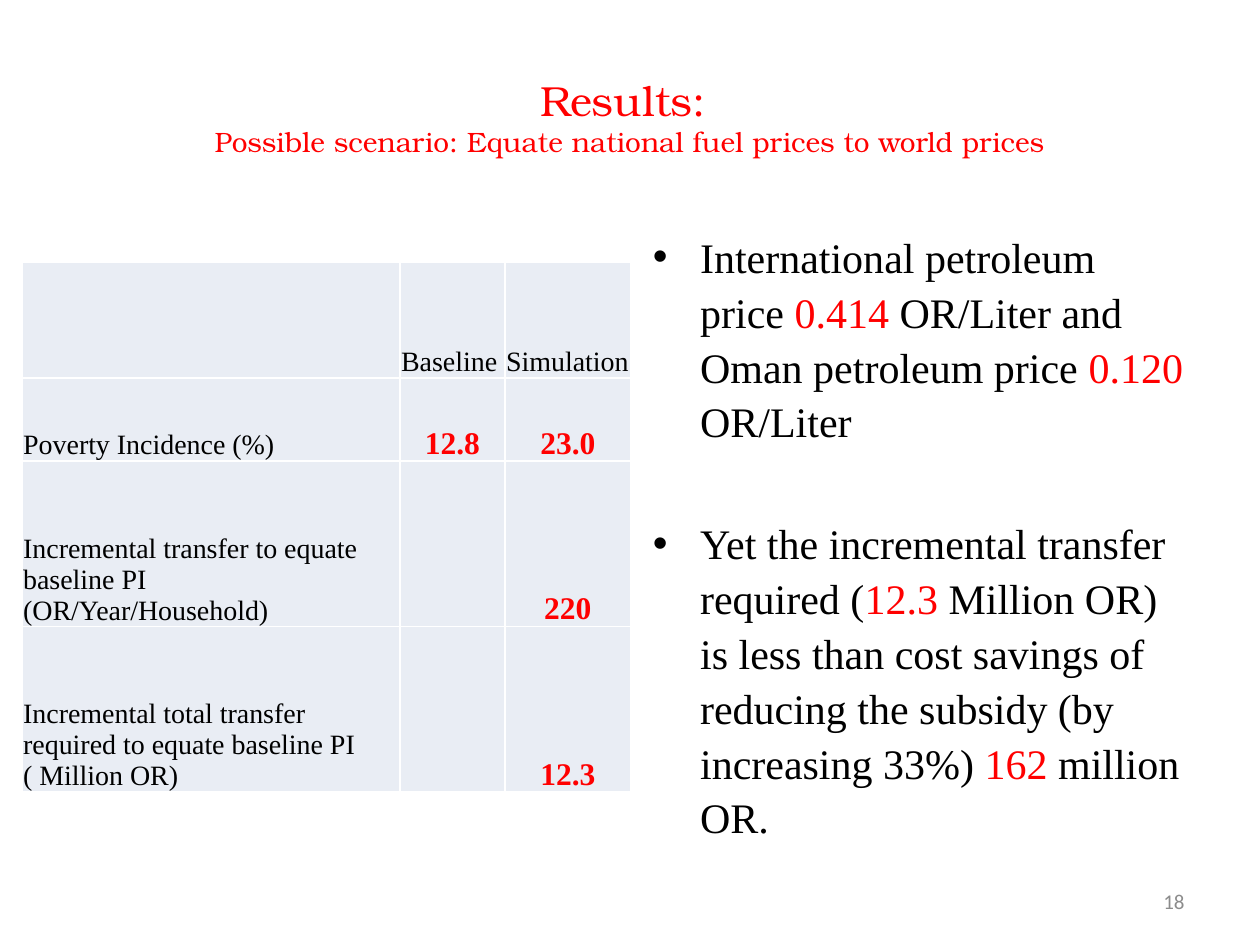
import pptx
import pptx.util
import pptx.dml.color
import pptx.enum.text
from lxml import etree

Pt = pptx.util.Pt
RGB = pptx.dml.color.RGBColor
ALIGN = pptx.enum.text.PP_ALIGN
ANCHOR = pptx.enum.text.MSO_ANCHOR
NS = "http://schemas.openxmlformats.org/drawingml/2006/main"

RED = RGB(0xFF, 0, 0)
BLACK = RGB(0, 0, 0)
GREY = RGB(0x8C, 0x8C, 0x8C)
CELL = RGB(0xE9, 0xED, 0xF4)

# Content
TITLE = [("Results: ", 24),
         ("Possible scenario: Equate national fuel prices to world prices", 16)]
ROWS = [
    ["", "Baseline", "Simulation"],
    ["Poverty Incidence (%)", "12.8", "23.0"],
    ["Incremental transfer to equate baseline PI (OR/Year/Household)", "", "220"],
    ["Incremental total transfer required to equate baseline PI ( Million OR)", "", "12.3"],
]
COL_WIDTHS = [216, 60, 72]
ROW_HEIGHTS = [66, 47.5, 94.5, 94.5]
# Within a bullet, every second piece is a highlighted figure
BULLETS = [
    ["International petroleum price ", "0.414",
     " OR/Liter and Oman petroleum price ", "0.120", " OR/Liter"],
    ["Yet the incremental transfer required (", "12.3",
     " Million OR) is less than cost savings of reducing the subsidy (by increasing 33%) ",
     "162", " million OR."],
]
PAGE = "18"

# Formats
LABEL = {"name": "Times New Roman", "size": Pt(16), "bold": False}
FIGURE = {"name": "Times New Roman", "size": Pt(18), "bold": True}
BODY = {"name": "Times New Roman", "size": Pt(24)}


def add_run(p, text, color, fmt):
    r = p.add_run()
    r.text = text
    for key, value in fmt.items():
        setattr(r.font, key, value)
    r.font.color.rgb = color


def add_borders(cell):
    tcPr = cell._tc.get_or_add_tcPr()
    for side in ("lnL", "lnR", "lnT", "lnB"):
        ln = etree.SubElement(tcPr, f"{{{NS}}}{side}", w=str(Pt(1)))
        fill = etree.SubElement(ln, f"{{{NS}}}solidFill")
        etree.SubElement(fill, f"{{{NS}}}srgbClr", val="FFFFFF")


def add_bullet(p, indent):
    pPr = p._p.get_or_add_pPr()
    pPr.set("marL", str(Pt(indent)))
    pPr.set("indent", str(-Pt(indent)))
    etree.SubElement(pPr, f"{{{NS}}}buFont", typeface="Arial")
    etree.SubElement(pPr, f"{{{NS}}}buChar", char="•")


prs = pptx.Presentation()
prs.slide_width, prs.slide_height = Pt(720), Pt(540)
s = prs.slides.add_slide(prs.slide_layouts[5])

# Title
title = s.shapes.title
title.left, title.top, title.width, title.height = Pt(36), Pt(21.6), Pt(648), Pt(90)
tf = title.text_frame
tf.auto_size = pptx.enum.text.MSO_AUTO_SIZE.NONE
tf.vertical_anchor = ANCHOR.MIDDLE
for i, (text, size) in enumerate(TITLE):
    p = tf.add_paragraph() if i else tf.paragraphs[0]
    p.alignment = ALIGN.CENTER
    add_run(p, text, RED, {"name": "TeX Gyre Bonum", "size": Pt(size)})

# Results table
table = s.shapes.add_table(len(ROWS), len(COL_WIDTHS), Pt(12.5), Pt(150),
                           Pt(sum(COL_WIDTHS)), Pt(sum(ROW_HEIGHTS))).table
table.first_row = table.horz_banding = False
for col, width in zip(table.columns, COL_WIDTHS):
    col.width = Pt(width)
for i, (values, height) in enumerate(zip(ROWS, ROW_HEIGHTS)):
    table.rows[i].height = Pt(height)
    for j, text in enumerate(values):
        cell = table.cell(i, j)
        add_borders(cell)
        cell.fill.solid()
        cell.fill.fore_color.rgb = CELL
        cell.vertical_anchor = ANCHOR.BOTTOM
        cell.margin_left = cell.margin_right = cell.margin_top = Pt(0.75)
        cell.margin_bottom = 0
        if text:
            p = cell.text_frame.paragraphs[0]
            is_figure = i > 0 and j > 0
            p.alignment = ALIGN.CENTER if is_figure else ALIGN.LEFT
            add_run(p, text, RED if is_figure else BLACK, FIGURE if is_figure else LABEL)

# Bullets
tf = s.shapes.add_textbox(Pt(366), Pt(126), Pt(318), Pt(356.4)).text_frame
tf.word_wrap = True
for i, pieces in enumerate(BULLETS):
    p = tf.add_paragraph() if i else tf.paragraphs[0]
    p.line_spacing = 1.09
    p.space_before = Pt(38 if i else 0)
    add_bullet(p, 27)
    for k, text in enumerate(pieces):
        add_run(p, text, RED if k % 2 else BLACK, BODY)

# Page number
tf = s.shapes.add_textbox(Pt(516), Pt(500.5), Pt(168), Pt(28.8)).text_frame
tf.word_wrap = True
tf.vertical_anchor = ANCHOR.MIDDLE
p = tf.paragraphs[0]
p.alignment = ALIGN.RIGHT
add_run(p, PAGE, GREY, {"name": "Calibri", "size": Pt(12)})

prs.save("out.pptx")
